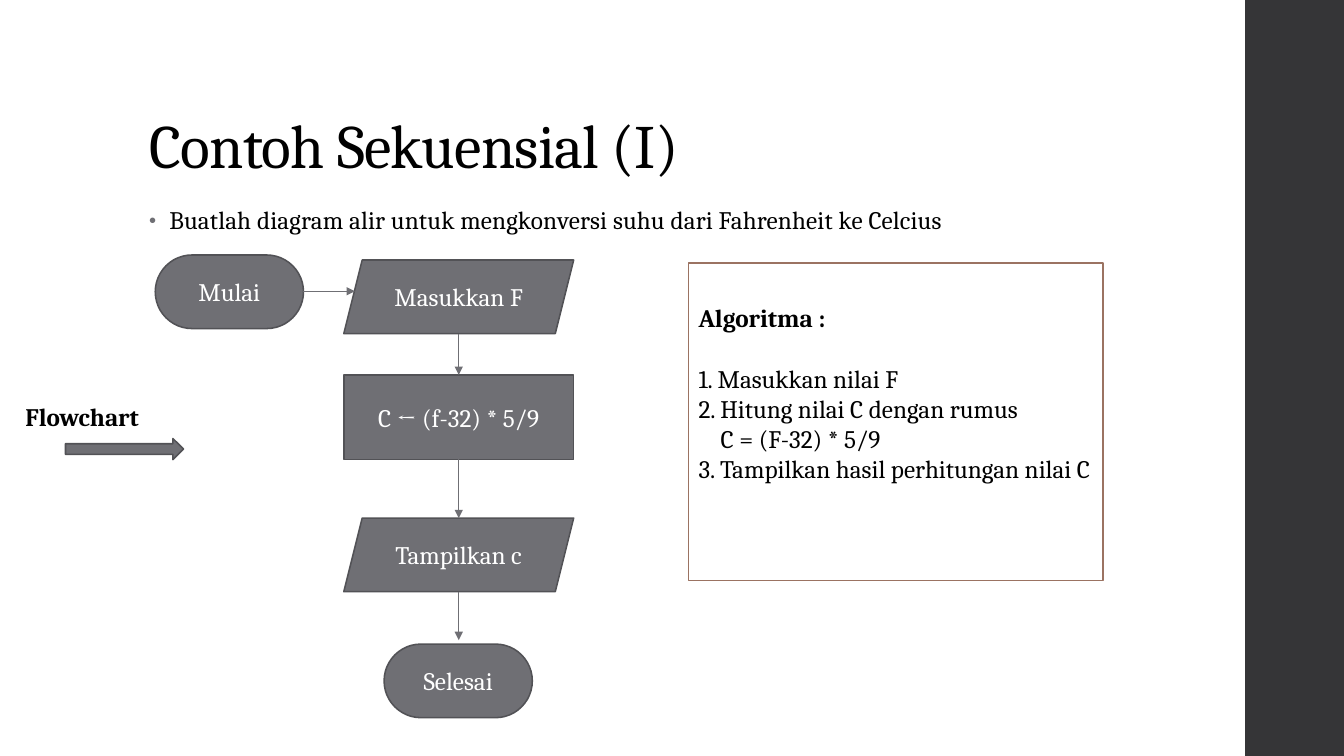
from lxml import etree
from pptx import Presentation
from pptx.dml.color import RGBColor
from pptx.enum.shapes import MSO_CONNECTOR, MSO_SHAPE as SHAPE
from pptx.enum.text import MSO_ANCHOR as ANCHOR, PP_ALIGN as ALIGN
from pptx.oxml import parse_xml
from pptx.oxml.ns import nsdecls, qn
from pptx.util import Inches, Pt

WHITE = RGBColor(0xFF, 0xFF, 0xFF)
BLACK = RGBColor(0x00, 0x00, 0x00)
DARK = RGBColor(0x35, 0x35, 0x37)
GRAY = RGBColor(0x6F, 0x6F, 0x74)
EDGE = RGBColor(0x52, 0x52, 0x56)
BROWN = RGBColor(0x9B, 0x73, 0x62)


def add_box(kind, x, y, w, h, fill, line=None):
    sp = s.shapes.add_shape(kind, Inches(x), Inches(y), Inches(w), Inches(h))
    sp.shadow.inherit = False
    sp.fill.solid()
    sp.fill.fore_color.rgb = fill
    if line is None:
        sp.line.fill.background()
    else:
        sp.line.color.rgb = line
        sp.line.width = Pt(1.1)
    return sp


def style_text(p, color, size=18, bold=False, align=ALIGN.LEFT):
    p.alignment = align
    for r in p.runs:
        r.font.name = "Cambria"
        r.font.size = Pt(size)
        r.font.bold = bold
        r.font.color.rgb = color


prs = Presentation()
prs.slide_width, prs.slide_height = Inches(13.33), Inches(7.5)
s = prs.slides.add_slide(prs.slide_layouts[1])

add_box(SHAPE.RECTANGLE, 12.35, 0, 0.98, 7.5, DARK)

title, body = s.placeholders
title.left, title.top, title.width, title.height = map(Inches, (1.38, 0.4, 10.6, 1.45))
title.text_frame.text = "Contoh Sekuensial (I)"
title.text_frame.vertical_anchor = ANCHOR.BOTTOM
p = title.text_frame.paragraphs[0]
p.line_spacing = 0.9
style_text(p, BLACK, size=44)
p.runs[0].font._element.set("spc", "-50")

body.left, body.top, body.width, body.height = map(Inches, (1.38, 2, 9.4, 5.25))
body.text_frame.text = "Buatlah diagram alir untuk mengkonversi suhu dari Fahrenheit ke Celcius"
p = body.text_frame.paragraphs[0]
p.line_spacing = 0.95
p.space_before, p.space_after = Pt(14), Pt(2)
style_text(p, BLACK)
p.runs[0].font._element.set("spc", "10")
pPr = p._p.get_or_add_pPr()
pPr.set("marL", str(Inches(0.2)))
pPr.set("indent", str(Inches(-0.2)))
for xml in (
    f'<a:buClr {nsdecls("a")}><a:srgbClr val="{GRAY}"/></a:buClr>',
    f'<a:buSzPct {nsdecls("a")} val="80000"/>',
    f'<a:buFont {nsdecls("a")} typeface="Arial"/>',
    f'<a:buChar {nsdecls("a")} char="•"/>',
):
    pPr.append(parse_xml(xml))

steps = [
    ("Mulai", SHAPE.ROUNDED_RECTANGLE, 1.54, 2.53, 1.47, 0.73),
    ("Masukkan F", SHAPE.PARALLELOGRAM, 3.41, 2.58, 2.28, 0.73),
    ("C ← (f-32) * 5/9", SHAPE.RECTANGLE, 3.41, 3.72, 2.28, 0.84),
    ("Tampilkan c", SHAPE.PARALLELOGRAM, 3.41, 5.14, 2.28, 0.73),
    ("Selesai", SHAPE.ROUNDED_RECTANGLE, 3.81, 6.39, 1.47, 0.73),
]
for text, kind, x, y, w, h in steps:
    sp = add_box(kind, x, y, w, h, GRAY, EDGE)
    if kind == SHAPE.ROUNDED_RECTANGLE:
        sp.adjustments[0] = 0.5
    sp.text_frame.text = text
    sp.text_frame.vertical_anchor = ANCHOR.MIDDLE
    style_text(sp.text_frame.paragraphs[0], WHITE, align=ALIGN.CENTER)

arrows = [
    (3.01, 2.89, 3.52, 2.89),
    (4.55, 3.31, 4.55, 3.72),
    (4.55, 4.55, 4.55, 5.14),
    (4.55, 5.87, 4.55, 6.35),
]
for ends in arrows:
    arrow = s.shapes.add_connector(MSO_CONNECTOR.STRAIGHT, *map(Inches, ends))
    arrow.line.color.rgb = GRAY
    arrow.line.width = Pt(0.75)
    etree.SubElement(arrow.line._get_or_add_ln(), qn("a:tailEnd"), type="triangle")
    etree.SubElement(arrow._element.spPr, qn("a:effectLst"))

algorithm = add_box(SHAPE.RECTANGLE, 6.83, 2.61, 4.11, 3.15, WHITE, BROWN)
tf = algorithm.text_frame
tf.vertical_anchor = ANCHOR.TOP
tf.margin_top = Inches(0.39)
tf.text = "\n".join([
    "Algoritma :",
    "1. Masukkan nilai F",
    "2. Hitung nilai C dengan rumus",
    "C = (F-32) * 5/9",
    "3. Tampilkan hasil perhitungan nilai C",
])
for i, p in enumerate(tf.paragraphs):
    style_text(p, BLACK, bold=i == 0)
tf.paragraphs[1].space_before = Pt(21.7)
tf.paragraphs[3]._p.get_or_add_pPr().set("marL", str(Inches(0.22)))

label = add_box(SHAPE.RECTANGLE, 0, 3.92, 1.63, 0.42, WHITE)
label.text_frame.text = "Flowchart"
label.text_frame.vertical_anchor = ANCHOR.MIDDLE
style_text(label.text_frame.paragraphs[0], BLACK, bold=True, align=ALIGN.CENTER)
add_box(SHAPE.RIGHT_ARROW, 0.65, 4.35, 1.17, 0.21, GRAY, EDGE)

prs.save("out.pptx")
